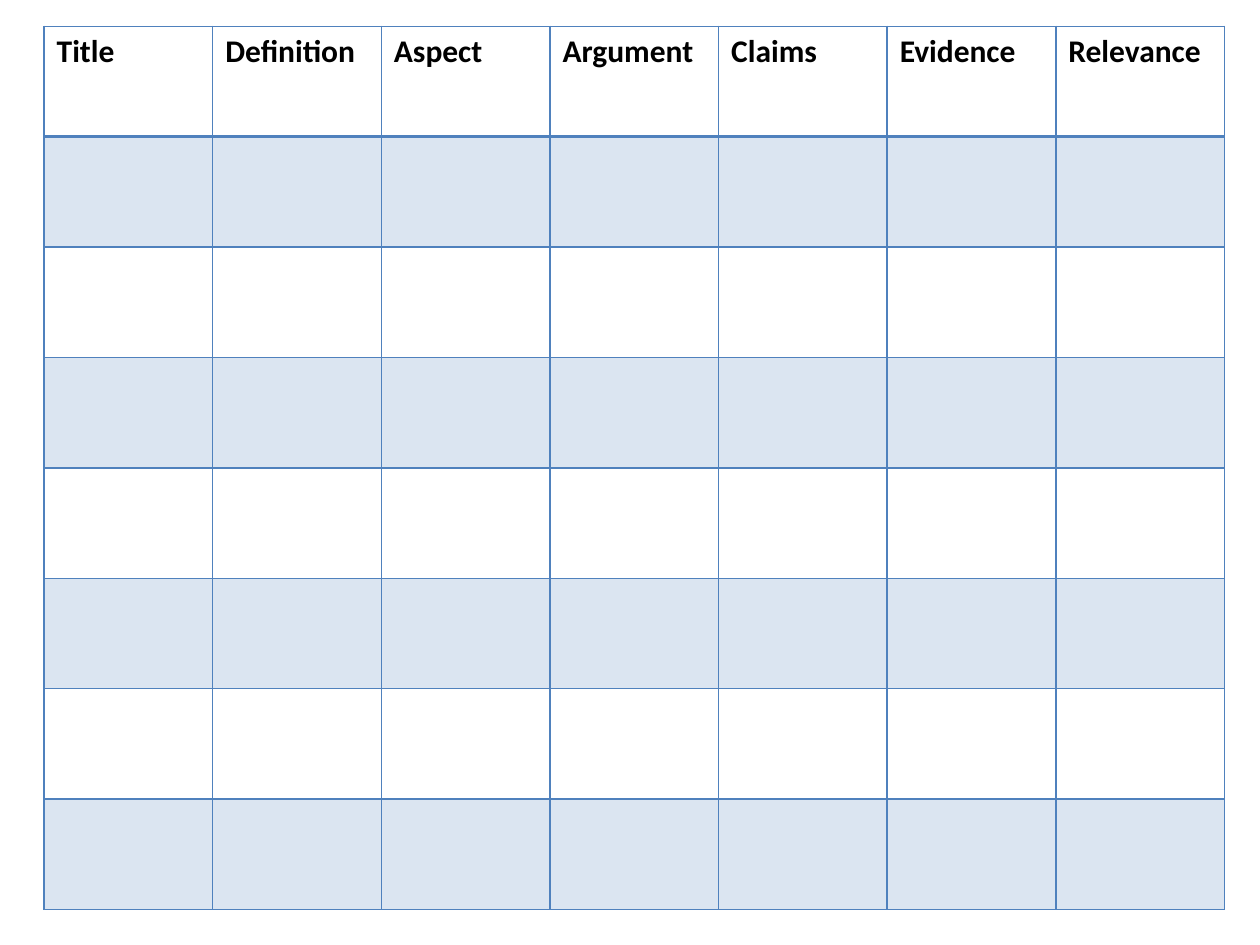
from pptx import Presentation
from pptx.dml.color import RGBColor
from pptx.oxml.ns import qn
from pptx.util import Inches, Pt
from lxml.etree import SubElement

HEADERS = ["Title", "Definition", "Aspect", "Argument", "Claims", "Evidence", "Relevance"]
BODY_ROWS = 7
LEFT, TOP, WIDTH, HEIGHT = 0.35, 0.21, 9.37, 7.01
BLUE = RGBColor(0x4F, 0x81, 0xBD)
BLACK = RGBColor(0, 0, 0)
BAND_OPACITY = 20
THIN, THICK = 1, 2


def add_borders(cell, top, bottom):
    """Draw the four cell borders; they must precede the fill in the XML."""
    properties = cell._tc.get_or_add_tcPr()
    for side, points in (("L", THIN), ("R", THIN), ("T", top), ("B", bottom)):
        line = SubElement(properties, qn(f"a:ln{side}"), w=str(Pt(points)))
        fill = SubElement(line, qn("a:solidFill"))
        SubElement(fill, qn("a:srgbClr"), val=str(BLUE))


def fill_band(cell):
    cell.fill.solid()
    cell.fill.fore_color.rgb = BLUE
    color = cell._tc.tcPr.find(qn("a:solidFill")).find(qn("a:srgbClr"))
    SubElement(color, qn("a:alpha"), val=str(BAND_OPACITY * 1000))


def add_header(cell, text):
    run = cell.text_frame.paragraphs[0].add_run()
    run.text = text
    run.font.name = "Calibri"
    run.font.size = Pt(18)
    run.font.bold = True
    run.font.color.rgb = BLACK


def main():
    presentation = Presentation()
    presentation.slide_width = Inches(10)
    presentation.slide_height = Inches(7.5)
    slide = presentation.slides.add_slide(presentation.slide_layouts[6])

    table = slide.shapes.add_table(
        BODY_ROWS + 1, len(HEADERS),
        Inches(LEFT), Inches(TOP), Inches(WIDTH), Inches(HEIGHT),
    ).table
    table.horz_banding = False

    for row_index in range(BODY_ROWS + 1):
        for column_index, header in enumerate(HEADERS):
            cell = table.cell(row_index, column_index)
            add_borders(
                cell,
                top=THICK if row_index == 1 else THIN,
                bottom=THICK if row_index == 0 else THIN,
            )
            if row_index % 2:
                fill_band(cell)
            else:
                cell.fill.background()
            if row_index == 0:
                add_header(cell, header)

    presentation.save("out.pptx")


if __name__ == "__main__":
    main()
